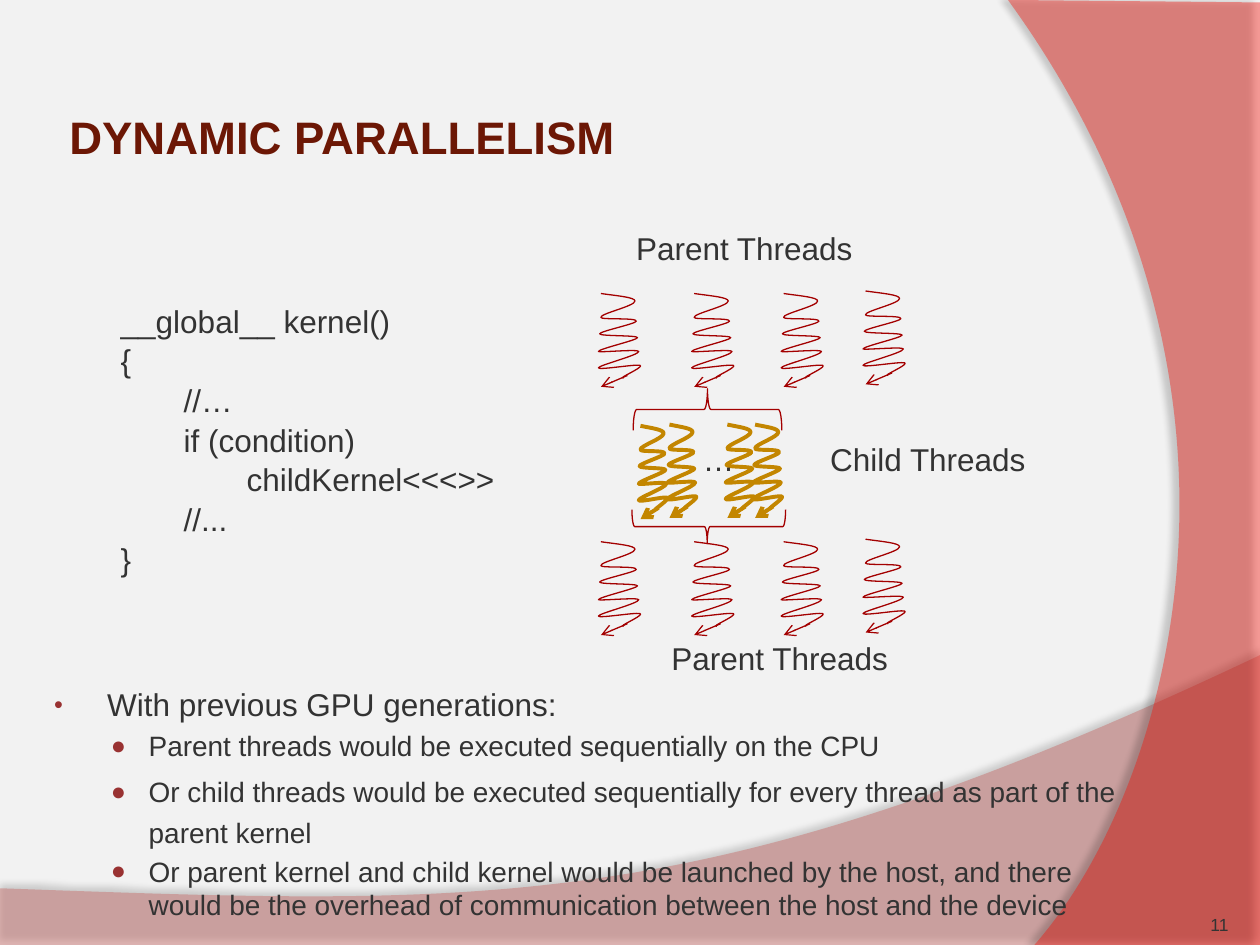
"""Build the Dynamic Parallelism slide."""
from dataclasses import dataclass

from lxml import etree
from pptx import Presentation
from pptx.dml.color import RGBColor
from pptx.enum.shapes import MSO_CONNECTOR, MSO_SHAPE
from pptx.enum.text import MSO_ANCHOR, MSO_AUTO_SIZE, PP_ALIGN
from pptx.oxml.ns import qn
from pptx.util import Inches, Pt

LINE = MSO_CONNECTOR.STRAIGHT
BRACE = MSO_SHAPE.RIGHT_BRACE
MIDDLE, BOTTOM = MSO_ANCHOR.MIDDLE, MSO_ANCHOR.BOTTOM
LEFT, RIGHT = PP_ALIGN.LEFT, PP_ALIGN.RIGHT
NO_FIT = MSO_AUTO_SIZE.NONE

FONT, INK, RED, GOLD = "Arial", "333333", "A30000", "C38600"
COIL = [
    (0.02, 0),
    (0.16, 0.02), (0.29, 0.03), (0.29, 0.06),
    (0.29, 0.10), (0.01, 0.16), (0.02, 0.19),
    (0.02, 0.21), (0.31, 0.19), (0.30, 0.22),
    (0.30, 0.24), (0.01, 0.30), (0.01, 0.32),
    (0.01, 0.34), (0.31, 0.33), (0.31, 0.35),
    (0.31, 0.37), (0, 0.44), (0, 0.46),
    (0, 0.47), (0.32, 0.44), (0.32, 0.46),
    (0.32, 0.49), (0, 0.57), (0, 0.59),
    (0, 0.61), (0.29, 0.56), (0.33, 0.57),
    (0.36, 0.58), (0.23, 0.64), (0.20, 0.66),
    (0.18, 0.67), (0.20, 0.67), (0.20, 0.67),
]
FLOOR = [(0, 7.05), (0, 7.5), (10, 7.5), (10, 5.2), (5.59, 7.29), (3.91, 7.19), (0, 7.05)]
SIDE = [(10, 0.02), (10, 7.5), (8.21, 7.5), (8.78, 6.85), (9.27, 5.72), (9.35, 4.38),
        (9.43, 3.05), (9.09, 1.5), (8, 0)]


@dataclass
class Thread:
    x: float
    y: float
    wide: float = 1
    hue: str = RED
    weight: float = 0.75


@dataclass
class Wave:
    points: list
    sides: int
    hue: str
    alpha: int
    shade: int
    dist: float
    angle: int


@dataclass
class Brace:
    box: tuple
    turn: int
    peak: float


@dataclass
class Label:
    text: str
    box: tuple


@dataclass
class Bullet:
    text: str
    level: int = 1
    space: float = 1


def color(value: str) -> RGBColor:
    return RGBColor.from_string(value)


def node(parent, tag: str, **attrs):
    return etree.SubElement(parent, qn(tag), {k: str(v) for k, v in attrs.items()})


def place(shape, box: tuple) -> None:
    shape.left, shape.top, shape.width, shape.height = map(Inches, box)


def style(para, size: float, hue: str = INK, bold: bool = False) -> None:
    for run in para.runs:
        font = run.font
        font.name, font.size, font.bold = FONT, Pt(size), bold
        font.color.rgb = color(hue)


def outline(shapes, points: list, sides: int = 0, close: bool = False):
    """Draw the given number of straight sides, then cubic curves."""
    spots = [(Inches(x), Inches(y)) for x, y in points]
    pen = shapes.build_freeform(*spots[0], scale=1.0)
    pen.add_line_segments(spots[1:], close=close)
    shape = pen.convert_to_shape()
    shape.shadow.inherit = False
    steps = list(shape.element.spPr.iter(qn("a:lnTo")))[sides:len(points) - 1]
    for i in range(0, len(steps), 3):
        bend = etree.Element(qn("a:cubicBezTo"))
        steps[i].addprevious(bend)
        for step in steps[i:i + 3]:
            bend.append(step[0])
            step.getparent().remove(step)
    return shape


def draw_wave(slide, wave: Wave) -> None:
    shape = outline(slide.shapes, wave.points, wave.sides, True)
    shape.fill.solid()
    shape.fill.fore_color.rgb = color(wave.hue)
    shape.line.fill.background()
    props = shape.element.spPr
    tint = props.find(qn("a:solidFill")).find(qn("a:srgbClr"))
    node(tint, "a:alpha", val=wave.alpha * 1000)
    glow = node(props.find(qn("a:effectLst")), "a:outerShdw", blurRad=Pt(4),
                dist=Pt(wave.dist), dir=wave.angle * 60000, rotWithShape=0)
    node(node(glow, "a:srgbClr", val="000000"), "a:alpha", val=wave.shade * 1000)
    slide.shapes.title.element.addprevious(shape.element)


def draw_thread(slide, thread: Thread) -> None:
    def spot(x: float, y: float) -> tuple:
        return thread.x + x * thread.wide, thread.y + y

    shapes = slide.shapes.add_group_shape().shapes
    coil = outline(shapes, [spot(*p) for p in COIL])
    coil.fill.background()
    ends = spot(0.23, 0.65) + spot(0.02, 0.74)
    arrow = shapes.add_connector(LINE, *map(Inches, ends))
    for shape in (coil, arrow):
        shape.line.color.rgb = color(thread.hue)
        shape.line.width = Pt(thread.weight)
    props = arrow.element.spPr
    node(props.find(qn("a:ln")), "a:tailEnd", type="arrow")
    node(props, "a:effectLst")


def draw_brace(slide, brace: Brace) -> None:
    shape = slide.shapes.add_shape(BRACE, *map(Inches, brace.box))
    shape.rotation = brace.turn
    shape.adjustments[1] = brace.peak
    shape.shadow.inherit = False
    shape.fill.background()
    shape.line.color.rgb = color(RED)
    shape.line.width = Pt(0.75)


def draw_label(slide, label: Label, size: float = 18):
    frame = slide.shapes.add_textbox(*map(Inches, label.box)).text_frame
    frame.word_wrap = True
    frame.text = label.text
    for para in frame.paragraphs:
        style(para, size)
    return frame


def draw_list(shape, items: list) -> None:
    place(shape, (0.29, 5.39, 8.79, 1.6))
    frame = shape.text_frame
    frame.auto_size = NO_FIT
    frame.text = "\n".join(item.text for item in items)
    for para, item in zip(frame.paragraphs, items):
        indent, hang, mark, scale, size = (
            (0.79, 0.3, "●", 90, 16) if item.level else (0.46, 0.42, "•", 80, 18))
        para.level = item.level
        props = para._p.get_or_add_pPr()
        props.set("marL", str(Inches(indent)))
        props.set("indent", str(-Inches(hang)))
        node(node(props, "a:buClr"), "a:srgbClr", val="993232")
        node(props, "a:buSzPct", val=scale * 1000)
        node(props, "a:buFont", typeface=FONT)
        node(props, "a:buChar", char=mark)
        para.space_before = Pt(0.2 * size if item.level else 0)
        para.line_spacing = item.space
        style(para, size)


def main() -> None:
    deck = Presentation()
    deck.slide_width, deck.slide_height = Inches(10), Inches(7.5)
    slide = deck.slides.add_slide(deck.slide_layouts[1])
    slide.background.fill.solid()
    slide.background.fill.fore_color.rgb = color("F2F2F2")
    draw_wave(slide, Wave(FLOOR, 3, "C76A66", 45, 35, 3.5, 270))
    draw_wave(slide, Wave(SIDE, 2, "F61309", 40, 45, 4, 180))

    title = slide.shapes.title
    place(title, (0.5, 0.61, 8.17, 0.94))
    frame = title.text_frame
    frame.text = "DYNAMIC PARALLELISM"
    frame.vertical_anchor = MIDDLE
    frame.margin_left = frame.margin_right = Inches(0.05)
    frame.paragraphs[0].alignment = LEFT
    style(frame.paragraphs[0], 26, "6C1705", True)

    code = draw_label(slide, Label(
        "__global__ kernel()\n{\n\t//…\n\tif (condition)\n\t\tchildKernel<<<>>\n\t//...\n}",
        (0.86, 2.33, 3.57, 2.22)))
    for para in code.paragraphs:
        para.line_spacing = 1.05
        tabs = node(para._p.get_or_add_pPr(), "a:tabLst")
        for stop in (0.5, 1):
            node(tabs, "a:tab", pos=Inches(stop), algn="l")

    for top in (2.33, 4.3):
        for x, lift in ((4.75, 0), (5.49, 0), (6.2, 0), (6.85, 0.02)):
            draw_thread(slide, Thread(x, top - lift))
    for x, y in ((5.07, 3.38), (5.3, 3.37), (5.76, 3.37), (5.98, 3.37)):
        draw_thread(slide, Thread(x, y, 0.68, GOLD, 2.25))
    draw_brace(slide, Brace((5.45, 2.66, 0.33, 1.18), 270, 0.5))
    draw_brace(slide, Brace((5.49, 3.57, 0.27, 1.22), 90, 0.51))

    for label in (Label("…", (5.48, 3.44, 0.35, 0.4)),
                  Label("Parent Threads", (4.95, 1.77, 2.3, 0.4)),
                  Label("Child Threads", (6.49, 3.44, 2.51, 0.4)),
                  Label("Parent Threads", (5.23, 5.02, 2.02, 0.4))):
        draw_label(slide, label)

    draw_list(slide.placeholders[1], [
        Bullet("With previous GPU generations:", 0),
        Bullet("Parent threads would be executed sequentially on the CPU"),
        Bullet("Or child threads would be executed sequentially for every thread "
               "as part of the parent kernel", space=1.2),
        Bullet("Or parent kernel and child kernel would be launched by the host, and there "
               "would be the overhead of communication between the host and the device"),
    ])

    page = draw_label(slide, Label("11", (8.92, 7.02, 0.83, 0.4)), 10)
    page.margin_left = page.margin_right = page.margin_top = page.margin_bottom = 0
    page.vertical_anchor = BOTTOM
    page.paragraphs[0].alignment = RIGHT
    deck.save("out.pptx")


if __name__ == "__main__":
    main()
